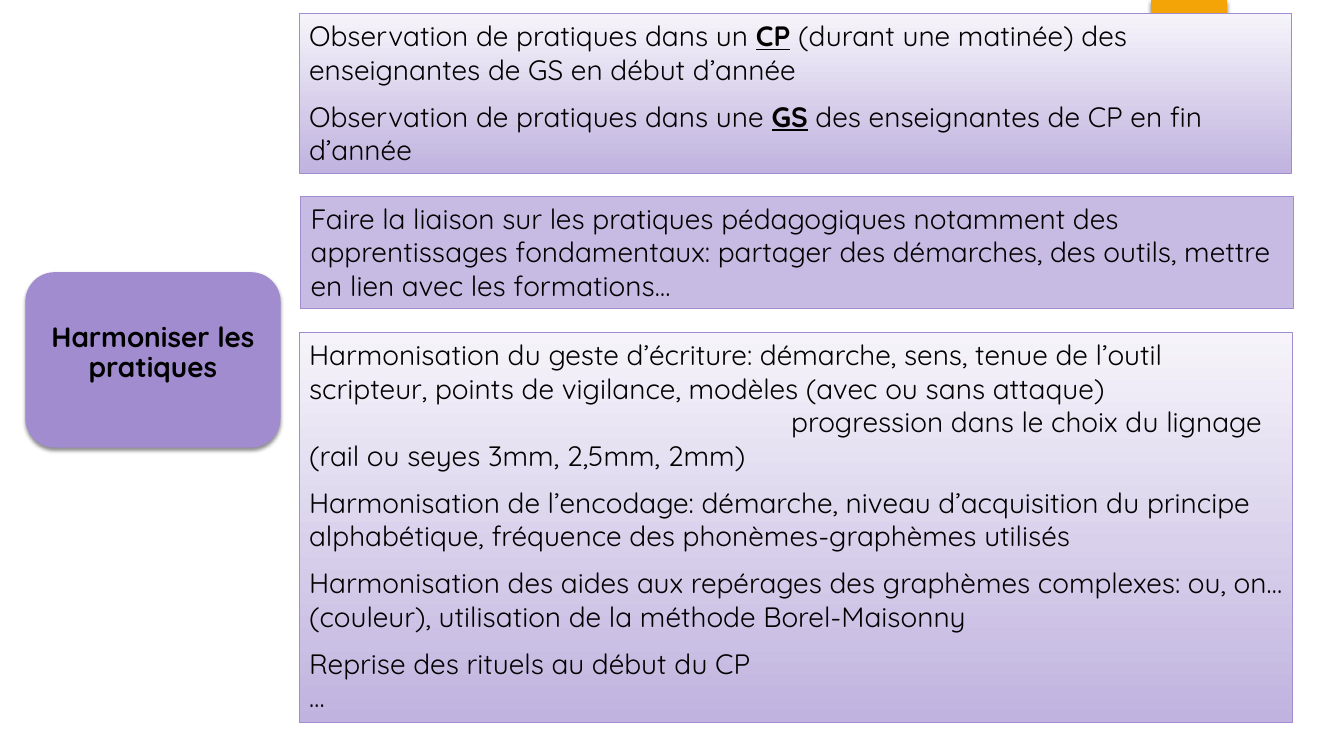
"""Build the slide on harmonising practices between GS and CP."""
from lxml import etree
from pptx import Presentation
from pptx import util as u
from pptx.dml.color import RGBColor
from pptx.enum import shapes, text
from pptx.oxml.ns import qn

COLOURS = {"tab": "F5A408", "theme": "A18CD0", "pale": "F6F4FA",
           "deep": "C0B3DF", "plain": "C7BAE3", "ink": "000000"}
FONT = {"name": "Quicksand", "size": u.Pt(20)}
EMPHASIS = {"bold": True, "underline": True}
GAP, NO_GAP = 9.5, 0
LINEAGE_INDENT = 12.15

THEME = "Harmoniser les pratiques"
THEME_PLACE = (0.64, 6.86, 6.43, 4.42)
THEME_TEXT_PLACE = (0.64, 7.75, 6.43, 2.39)
TAB_PLACE = (29.01, 0, 1.91, 3.18)

# Each paragraph: space before, first-line indent, runs (odd runs emphasised)
PANELS = [
    {"place": (7.54, 0.35, 25.02, 4.02), "fill": ("pale", "deep"), "paragraphs": [
        (NO_GAP, 0, ["Observation de pratiques dans un ", "CP",
                     " (durant une matinée) des enseignantes de GS en début d’année"]),
        (GAP, 0, ["Observation de pratiques dans une ", "GS",
                  " des enseignantes de CP en fin d’année"])]},
    {"place": (7.54, 8.38, 25.04, 9.83), "fill": ("pale", "deep"), "paragraphs": [
        (NO_GAP, 0, ["Harmonisation du geste d’écriture: démarche, sens, tenue de l’outil "
                     "scripteur, points de vigilance, modèles (avec ou sans attaque)"]),
        (NO_GAP, LINEAGE_INDENT, ["progression dans le choix du lignage "
                                  "(rail ou seyes 3mm, 2,5mm, 2mm)"]),
        (GAP, 0, ["Harmonisation de l’encodage: démarche, niveau d’acquisition du principe "
                  "alphabétique, fréquence des phonèmes-graphèmes utilisés"]),
        (GAP, 0, ["Harmonisation des aides aux repérages des graphèmes complexes: ou, on… "
                  "(couleur), utilisation de la méthode Borel-Maisonny"]),
        (GAP, 0, ["Reprise des rituels au début du CP"]),
        (NO_GAP, 0, ["…"])]},
    {"place": (7.58, 4.95, 25.02, 2.82), "fill": ("plain",), "paragraphs": [
        (NO_GAP, 0, ["Faire la liaison sur les pratiques pédagogiques notamment des "
                     "apprentissages fondamentaux: partager des démarches, des outils, "
                     "mettre en lien avec les formations…"])]},
]


def rgb(key):
    return RGBColor.from_string(COLOURS[key])


def lengths(place):
    return [u.Cm(value) for value in place]


def apply(target, formats):
    for attribute, value in formats.items():
        setattr(target, attribute, value)


def add_block(slide, kind, place, fill):
    block = slide.shapes.add_shape(kind, *lengths(place))
    block.shadow.inherit = False
    if len(fill) == 1:
        block.fill.solid()
        block.fill.fore_color.rgb = rgb(fill[0])
    else:
        block.fill.gradient()
        block.fill.gradient_angle = 270
        for position, (stop, key) in enumerate(zip(block.fill.gradient_stops, fill)):
            stop.position = position
            stop.color.rgb = rgb(key)
    return block


def add_raised_block(slide, kind, place, fill):
    block = add_block(slide, kind, place, fill)
    block.line.fill.background()
    effects = block._element.spPr.find(qn("a:effectLst"))
    shadow = etree.SubElement(effects, qn("a:outerShdw"), blurRad=str(u.Pt(3)),
                              dist=str(u.Pt(2)), dir="5400000", rotWithShape="0")
    colour = etree.SubElement(shadow, qn("a:srgbClr"), val=COLOURS["ink"])
    etree.SubElement(colour, qn("a:alpha"), val="45000")


def add_run(paragraph, words, formats):
    run = paragraph.add_run()
    run.text = words
    apply(run.font, {**FONT, **formats})
    run.font.color.rgb = rgb("ink")


def add_panel(slide, place, fill, paragraphs):
    panel = add_block(slide, shapes.MSO_SHAPE.RECTANGLE, place, fill)
    panel.line.color.rgb = rgb("theme")
    panel.line.width = u.Pt(0.75)
    frame = panel.text_frame
    apply(frame, {"word_wrap": True, "vertical_anchor": text.MSO_ANCHOR.TOP,
                  "auto_size": text.MSO_AUTO_SIZE.SHAPE_TO_FIT_TEXT})
    for number, (before, indent, runs) in enumerate(paragraphs):
        paragraph = frame.add_paragraph() if number else frame.paragraphs[0]
        paragraph.alignment = text.PP_ALIGN.LEFT
        if before:
            paragraph.space_before = u.Pt(before)
        if indent:
            paragraph._p.get_or_add_pPr().set("indent", str(u.Cm(indent)))
        for place_in_line, words in enumerate(runs):
            add_run(paragraph, words, EMPHASIS if place_in_line % 2 else {})


def add_theme(slide):
    add_raised_block(slide, shapes.MSO_SHAPE.ROUNDED_RECTANGLE, THEME_PLACE, ("theme",))
    frame = slide.shapes.add_textbox(*lengths(THEME_TEXT_PLACE)).text_frame
    inset = u.Cm(0.4)
    apply(frame, {"word_wrap": True, "margin_left": inset, "margin_right": inset,
                  "margin_top": inset, "margin_bottom": 0})
    title = frame.paragraphs[0]
    apply(title, {"alignment": text.PP_ALIGN.CENTER, "line_spacing": 0.9})
    add_run(title, THEME, {"bold": True})


def main():
    deck = Presentation()
    apply(deck, {"slide_width": u.Cm(33.87), "slide_height": u.Cm(19.05)})
    slide = deck.slides.add_slide(deck.slide_layouts[6])
    add_raised_block(slide, shapes.MSO_SHAPE.RECTANGLE, TAB_PLACE, ("tab",))
    add_theme(slide)
    for panel in PANELS:
        add_panel(slide, **panel)
    deck.save("out.pptx")


if __name__ == "__main__":
    main()
